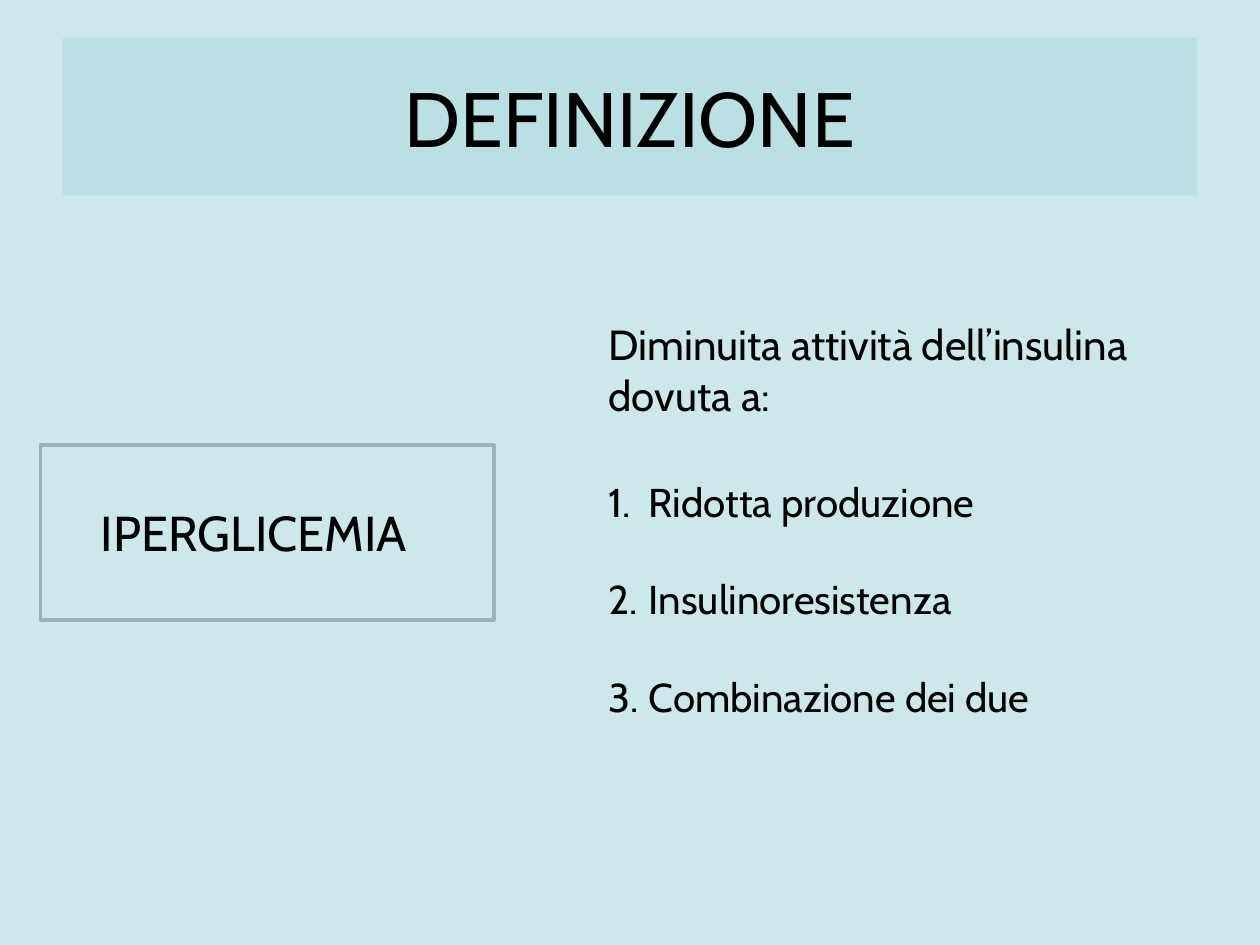
import pptx
import pptx.dml.color
import pptx.enum.shapes
import pptx.enum.text
import pptx.util
import lxml.etree
import pptx.oxml.ns

Inches = pptx.util.Inches
Pt = pptx.util.Pt
ALIGN = pptx.enum.text.PP_ALIGN
ANCHOR = pptx.enum.text.MSO_ANCHOR

COLORS = {"background": "CCE8EA", "banner": "BBE0E3", "frame": "96B3B6", "text": "000000"}
FONT = "Cabin"
INSET = 0.05


def color(name):
    return pptx.dml.color.RGBColor.from_string(COLORS[name])


def write(shape, lines, size, align=ALIGN.LEFT, anchor=ANCHOR.TOP, left_inset=INSET, wrap=True):
    frame = shape.text_frame
    frame.word_wrap = wrap
    frame.vertical_anchor = anchor
    frame.margin_left = Inches(left_inset)
    frame.margin_top = frame.margin_right = frame.margin_bottom = Inches(INSET)
    frame.text = "\n".join(lines)
    for paragraph in frame.paragraphs:
        paragraph.alignment = align
        for run in paragraph.runs:
            run.font.name = FONT
            run.font.size = Pt(size)
            run.font.color.rgb = color("text")
    return frame.paragraphs


def add_rectangle(slide, left, top, width, height):
    rectangle = slide.shapes.add_shape(
        pptx.enum.shapes.MSO_SHAPE.RECTANGLE,
        Inches(left), Inches(top), Inches(width), Inches(height))
    rectangle.shadow.inherit = False
    return rectangle


def add_text_box(slide, left, top, width, height):
    return slide.shapes.add_textbox(Inches(left), Inches(top), Inches(width), Inches(height))


def number(paragraph, indent):
    properties = paragraph._p.get_or_add_pPr()
    properties.set("marL", str(Inches(indent)))
    properties.set("indent", str(-Inches(indent)))
    bullet = lxml.etree.SubElement(properties, pptx.oxml.ns.qn("a:buAutoNum"))
    bullet.set("type", "arabicPeriod")


def add_title(slide, left, top, width, height):
    banner = add_rectangle(slide, left, top, width, height)
    banner.fill.solid()
    banner.fill.fore_color.rgb = color("banner")
    banner.line.fill.background()
    write(banner, ["DEFINIZIONE"], 44, ALIGN.CENTER, ANCHOR.MIDDLE)


def add_condition(slide, left, top, width, height):
    frame = add_rectangle(slide, left, top, width, height)
    frame.fill.background()
    frame.line.color.rgb = color("frame")
    frame.line.width = Pt(2)
    write(frame, ["IPERGLICEMIA"], 28, anchor=ANCHOR.MIDDLE, left_inset=0.48)


def add_causes(slide, left, top, width, height):
    intro_height = 0.9
    list_offset = 1.26
    # Introduction
    intro = add_text_box(slide, left, top, width, intro_height)
    write(intro, ["Diminuita attività dell’insulina", "dovuta a:"], 24, wrap=False)
    # Numbered causes, one line apart
    causes = add_text_box(slide, left, top + list_offset, width, height - list_offset)
    items = write(causes, ["Ridotta produzione", "Insulinoresistenza", "Combinazione dei due"], 23)
    for index, item in enumerate(items):
        item.space_before = Pt(28 if index else 0)
        number(item, 0.32)


def main():
    deck = pptx.Presentation()
    deck.slide_width = Inches(10)
    deck.slide_height = Inches(7.5)
    slide = deck.slides.add_slide(deck.slide_layouts[6])
    slide.background.fill.solid()
    slide.background.fill.fore_color.rgb = color("background")

    add_title(slide, 0.5, 0.3, 9, 1.25)
    add_causes(slide, 4.78, 2.48, 4.65, 3.3)
    add_condition(slide, 0.32, 3.53, 3.6, 1.39)
    deck.save("out.pptx")


if __name__ == "__main__":
    main()
